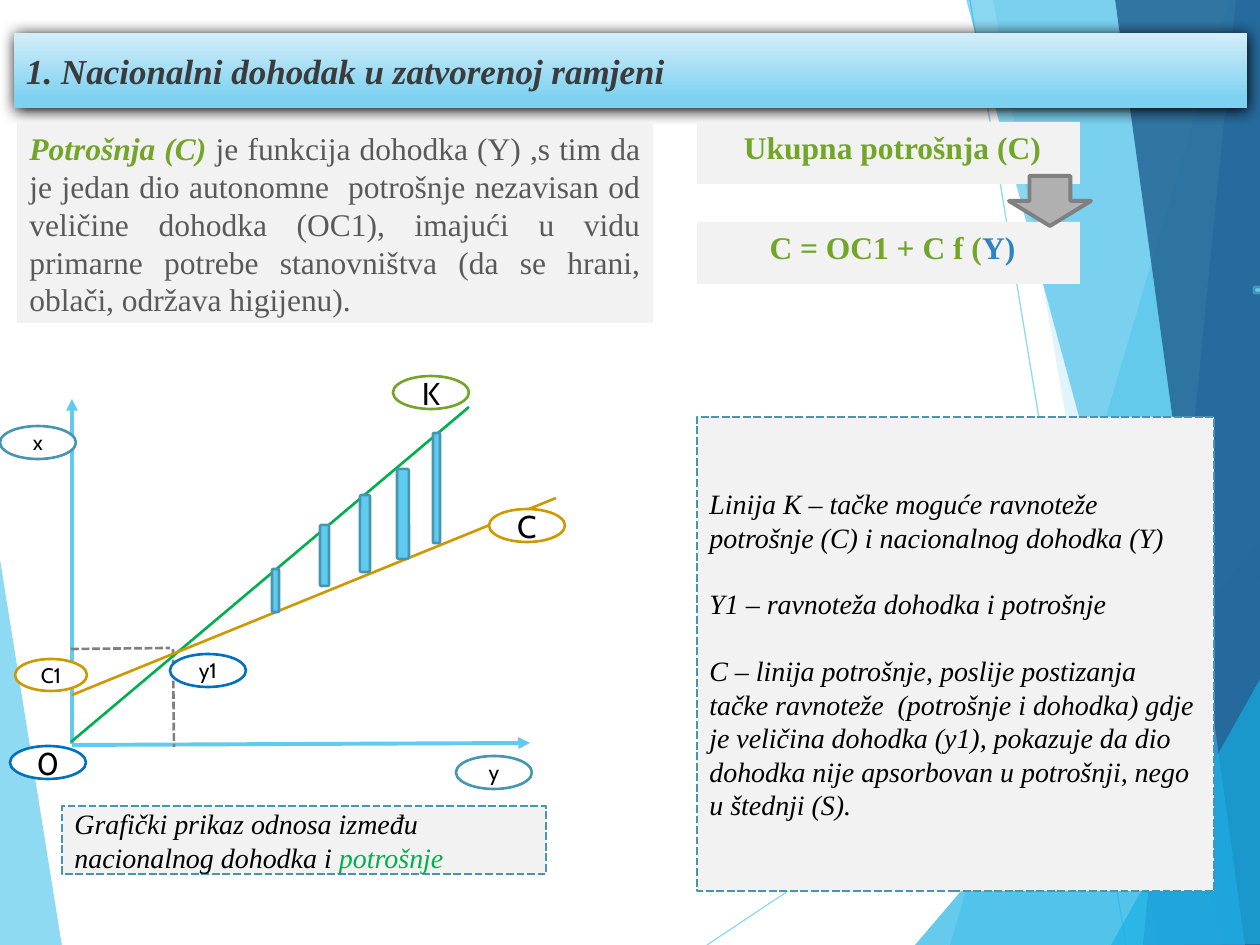
"""Build a slide on national income and consumption in a closed economy."""
import pptx
import pptx.dml.color
import pptx.enum.dml
import pptx.enum.shapes
import pptx.enum.text
import pptx.oxml
import pptx.oxml.ns
import pptx.util

SCALE = 914400 / 126
SERIF, SANS = "Times New Roman", "Cabin"
SHAPE = pptx.enum.shapes.MSO_SHAPE
ALIGN = pptx.enum.text.PP_ALIGN
ANCHOR = pptx.enum.text.MSO_ANCHOR
DASH = pptx.enum.dml.MSO_LINE.SQUARE_DOT
COLORS = {
    "sky": "5FCBEF", "cyan": "17B0E4", "blue": "2E83C3", "navy": "226292",
    "panel": "F2F2F2", "edge": "4696B1", "green": "72A528", "leaf": "00B050",
    "gold": "CC9900", "royal": "0070C0", "gray": "808080", "silver": "B0B0B0",
    "body": "595959", "title": "3B3B3B", "black": "000000", "white": "FFFFFF",
    "pale": "D4EEF9", "light": "7DD1F1",
}

TITLE = "1. Nacionalni dohodak u zatvorenoj ramjeni"
TITLE_BOX = (14, 33, 1233, 75)
FACETS = [
    ("sky", 70, [(-1, 553), (62, 946), (-1, 945)]),
    ("sky", 36, [(1229, 0), (950, 945), (1263, 946), (1261, 1)]),
    ("sky", 20, [(993, -1), (1158, 945), (1261, 945), (1261, -1)]),
    ("cyan", 66, [(915, 945), (1260, 541), (1261, 945)]),
    ("cyan", 50, [(966, -1), (1222, 945), (1261, 944), (1261, -1)]),
    ("blue", 70, [(1236, -1), (1143, 945), (1261, 945), (1260, -1)]),
    ("navy", 82, [(1115, -1), (1245, 945), (1263, 945), (1260, -1)]),
    ("cyan", 66, [(1111, 945), (1263, 674), (1263, 944)]),
]
RAYS = [(707, 945, 1261, 576), (970, 0, 1126, 945)]
AXES = [(72, 745, 530, 743), (72, 744, 72, 399)]
CURVES = [("leaf", (71, 742, 469, 407)), ("gold", (72, 695, 556, 498))]
GUIDES = [(71, 649, 170, 648), (173, 649, 174, 747)]
BARS = [(433, 433, 7, 110), (360, 495, 10, 77), (397, 469, 12, 90),
        (320, 525, 9, 61), (272, 569, 7, 43), (1254, 287, 44, 6)]
LABELS = [
    ("K", 18, "green", (393, 376, 76, 33)), ("y", 12, "edge", (456, 756, 76, 33)),
    ("x", 12, "edge", (0, 426, 76, 33)), ("C", 18, "gold", (489, 509, 76, 33)),
    ("C1", 12, "gold", (15, 659, 72, 32)), ("0", 18, "royal", (10, 746, 76, 33)),
    ("y1", 12, "royal", (170, 654, 76, 33)),
]
FORMULA_BOXES = [
    ((697, 122, 383, 62), [(" ", "body", ""), ("Ukupna potrošnja (C)", "green", "b")]),
    ((697, 222, 383, 62), [(" ", "body", ""), ("C = OC1 + C f (", "green", "b"),
                           ("Y)", "blue", "b")]),
]
DEFINITION_BOX = (17, 123, 636, 200)
DEFINITION = [
    ("Potrošnja (C)", "green", "bi"),
    (" je funkcija dohodka (Y) ,s tim da je jedan dio autonomne  potrošnje "
     "nezavisan od veličine dohodka (OC1), imajući u vidu primarne potrebe "
     "stanovništva (da se hrani, oblači, održava higijenu). ", "body", ""),
]
CAPTION_BOX = (62, 806, 484, 68)
CAPTION = [("Grafički prikaz odnosa između nacionalnog dohodka i ", "black", "i"),
           ("potrošnje", "leaf", "i")]
LEGEND_BOX = (697, 417, 517, 474)
LEGEND = [
    "Linija K – tačke moguće ravnoteže potrošnje (C) i nacionalnog dohodka (Y)",
    "Y1 – ravnoteža dohodka i potrošnje",
    "C – linija potrošnje, poslije postizanja tačke ravnoteže  (potrošnje i dohodka) "
    "gdje je veličina dohodka (y1), pokazuje da dio dohodka nije apsorbovan u "
    "potrošnji, nego u štednji (S).",
]
ARROW_BOX = (1009, 176, 82, 50)


def px(value):
    return pptx.util.Emu(round(value * SCALE))


def rgb(name):
    return pptx.dml.color.RGBColor.from_string(COLORS[name])


def element(xml):
    start, rest = xml.split(" ", 1)
    return pptx.oxml.parse_xml(f'{start} {pptx.oxml.ns.nsdecls("a")} {rest}')


def set_alpha(properties, percent):
    color = next(properties.iter(pptx.oxml.ns.qn("a:srgbClr")))
    color.append(element(f'<a:alpha val="{percent * 1000}"/>'))


def style_line(line, color, width, dash=None):
    line.color.rgb = rgb(color)
    line.width = pptx.util.Pt(width)
    if dash:
        line.dash_style = dash


def finish(shape, fill, line=None, width=1.5, dash=None):
    shape.shadow.inherit = False
    shape.fill.solid()
    shape.fill.fore_color.rgb = rgb(fill)
    if line:
        style_line(shape.line, line, width, dash)
    else:
        shape.line.fill.background()
    return shape


def add_box(slide, kind, box, *style):
    return finish(slide.shapes.add_shape(kind, *map(px, box)), *style)


def add_line(slide, ends, color, width, dash=None, arrow=False):
    connector = slide.shapes.add_connector(
        pptx.enum.shapes.MSO_CONNECTOR.STRAIGHT, *map(px, ends))
    style_line(connector.line, color, width, dash)
    if arrow:
        connector.line._get_or_add_ln().append(element('<a:tailEnd type="triangle"/>'))
    properties = connector._element.spPr
    properties.append(element('<a:effectLst />'))
    return properties


def write(shape, paragraphs, size, align=ALIGN.LEFT, anchor=ANCHOR.MIDDLE,
          font=SERIF, gap=0, insets=None):
    frame = shape.text_frame
    frame.word_wrap = True
    frame.vertical_anchor = anchor
    if insets:
        frame.margin_left = frame.margin_right = px(insets[0])
        frame.margin_top = frame.margin_bottom = px(insets[1])
    for index, runs in enumerate(paragraphs):
        paragraph = frame.add_paragraph() if index else frame.paragraphs[0]
        paragraph.alignment = align
        paragraph.space_before = pptx.util.Pt(gap if index else 0)
        for text, color, style in runs:
            run = paragraph.add_run()
            run.text = text
            run.font.name = font
            run.font.size = pptx.util.Pt(size)
            run.font.bold = "b" in style
            run.font.italic = "i" in style
            run.font.color.rgb = rgb(color)


def add_backdrop(slide):
    for index, (color, alpha, points) in enumerate(FACETS):
        builder = slide.shapes.build_freeform(*points[0], scale=SCALE)
        builder.add_line_segments(points[1:], close=True)
        facet = finish(builder.convert_to_shape(), color)
        set_alpha(facet._element.spPr, alpha)
        if index == 0:
            for ray in RAYS:
                set_alpha(add_line(slide, ray, "sky", 0.75), 70)


def place_title(slide):
    title = slide.shapes.title
    title.left, title.top, title.width, title.height = map(px, TITLE_BOX)
    properties = title._element.spPr
    properties.append(element('<a:prstGeom prst="roundRect"><a:avLst/></a:prstGeom>'))
    title.fill.gradient()
    title.fill.gradient_angle = 270
    for stop, color, position in zip(title.fill.gradient_stops, ("pale", "light"), (0, 0.88)):
        stop.color.rgb = rgb(color)
        stop.position = position
    properties.append(element(
        '<a:effectLst ><a:outerShdw blurRad="107950" dist="12700" dir="5400000" '
        'rotWithShape="0"><a:srgbClr val="000000"/></a:outerShdw></a:effectLst>'))
    write(title, [[(TITLE, "title", "bi")]], 20, insets=(12, 5))
    slide.shapes._spTree.append(title._element)


def add_graph(slide):
    for axis in AXES:
        add_line(slide, axis, "sky", 2.25, arrow=True)
    for guide in GUIDES:
        add_line(slide, guide, "gray", 1.5, DASH)
    for color, ends in CURVES:
        add_line(slide, ends, color, 1.5)
    for bar in BARS:
        add_box(slide, SHAPE.ROUNDED_RECTANGLE, bar, "sky", "edge")
    for text, size, color, box in LABELS:
        label = add_box(slide, SHAPE.OVAL, box, "white", color)
        write(label, [[(text, "black", "")]], size, ALIGN.CENTER, font=SANS, insets=(0, 0))


def add_texts(slide):
    for box, runs in FORMULA_BOXES:
        panel = add_box(slide, SHAPE.RECTANGLE, box, "panel")
        write(panel, [runs], 18, ALIGN.CENTER, ANCHOR.TOP)
    definition = add_box(slide, SHAPE.RECTANGLE, DEFINITION_BOX, "panel")
    write(definition, [DEFINITION], 18, ALIGN.JUSTIFY, ANCHOR.TOP)
    legend = [[(text, "black", "i")] for text in LEGEND]
    for box, paragraphs in ((CAPTION_BOX, [CAPTION]), (LEGEND_BOX, legend)):
        panel = add_box(slide, SHAPE.RECTANGLE, box, "panel", "edge", 1.5, DASH)
        write(panel, paragraphs, 16, gap=19)
    add_box(slide, SHAPE.DOWN_ARROW, ARROW_BOX, "silver", "gray", 2.25)


def main():
    presentation = pptx.Presentation()
    presentation.slide_width, presentation.slide_height = px(1260), px(945)
    slide = presentation.slides.add_slide(presentation.slide_layouts[5])
    add_backdrop(slide)
    place_title(slide)
    add_graph(slide)
    add_texts(slide)
    presentation.save("out.pptx")


if __name__ == "__main__":
    main()
